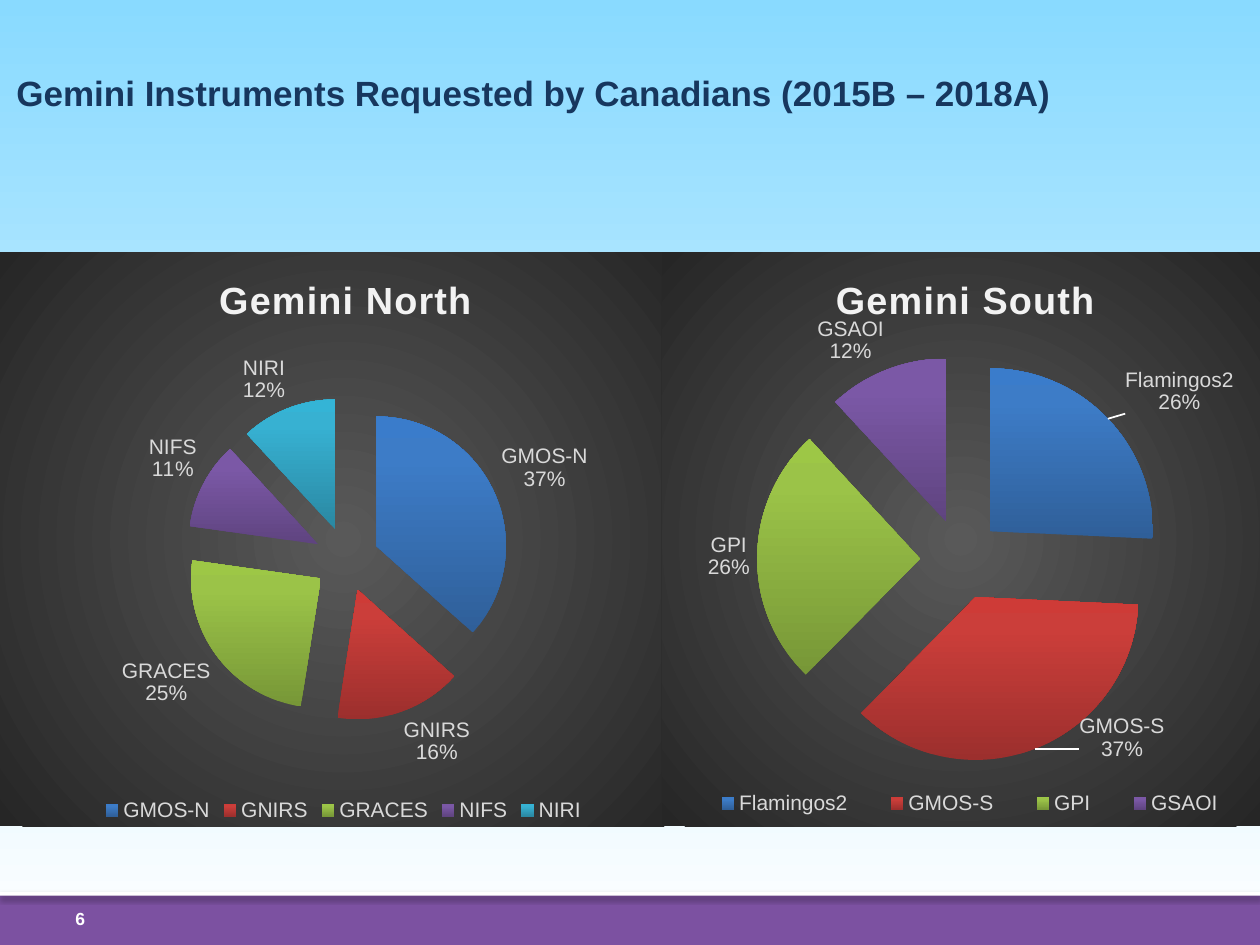
"""Build a slide with two exploded pie charts of requested Gemini instruments."""
from copy import deepcopy

from pptx import Presentation
from pptx.chart.data import CategoryChartData
from pptx.dml.color import RGBColor
from pptx.enum.chart import XL_CHART_TYPE as CT, XL_LABEL_POSITION as LP, XL_LEGEND_POSITION as LEG
from pptx.enum.shapes import MSO_SHAPE as SHAPE
from pptx.enum.text import MSO_ANCHOR as ANCHOR, PP_ALIGN as ALIGN
from pptx.oxml import parse_xml
from pptx.oxml.ns import nsdecls, qn
from pptx.util import Inches, Pt

NAVY = RGBColor(0x17, 0x37, 0x5E)
SKY = RGBColor(0x89, 0xDA, 0xFF)
PURPLE = RGBColor(0x7C, 0x51, 0xA1)
WHITE = RGBColor(0xFF, 0xFF, 0xFF)
BLACK = RGBColor(0, 0, 0)
SILVER = RGBColor(0xD9, 0xD9, 0xD9)
PALE = RGBColor(0xF2, 0xF2, 0xF2)
SLICES = [
    (RGBColor(0x2F, 0x5F, 0x99), RGBColor(0x3D, 0x7C, 0xC7), RGBColor(0x3A, 0x7C, 0xCB)),
    (RGBColor(0x9C, 0x2F, 0x2D), RGBColor(0xCB, 0x3E, 0x3A), RGBColor(0xCE, 0x3B, 0x37)),
    (RGBColor(0x77, 0x97, 0x37), RGBColor(0x9B, 0xC3, 0x48), RGBColor(0x9D, 0xC7, 0x46)),
    (RGBColor(0x5F, 0x44, 0x80), RGBColor(0x7B, 0x58, 0xA6), RGBColor(0x7C, 0x57, 0xA8)),
    (RGBColor(0x2A, 0x88, 0xA2), RGBColor(0x37, 0xB1, 0xD2), RGBColor(0x34, 0xB4, 0xD6)),
]
BACKDROP = (RGBColor(0x59, 0x59, 0x59), RGBColor(0x26, 0x26, 0x26))
CHARTS = [
    dict(title="Gemini North", left=-0.01, width=5.47, title_at=(0.31, 0.03),
         plot=(0.27, 0.25, 0.47, 0.57), legend=None, moved={},
         data={"GMOS-N": 37, "GNIRS": 16, "GRACES": 25, "NIFS": 11, "NIRI": 12}),
    dict(title="Gemini South", left=5.25, width=4.75, title_at=(0.28, 0.03),
         plot=(0.16, 0.18, 0.68, 0.71), legend=(0.04, 0.93, 0.95, 0.06),
         moved={0: (0.02, 0), 1: (0.07, -0.07)},
         data={"Flamingos2": 26, "GMOS-S": 37, "GPI": 26, "GSAOI": 12}),
]


def gradient(colors, positions, shade):
    stops = "".join(f'<a:gs pos="{pos * 1000}"><a:srgbClr val="{color}"/></a:gs>'
                    for color, pos in zip(colors, positions))
    return parse_xml(f'<a:gradFill {nsdecls("a")} rotWithShape="1">'
                     f'<a:gsLst>{stops}</a:gsLst>{shade}</a:gradFill>')


def place(follower, box, mode="edge", target=""):
    for old in follower.getparent().findall(qn("c:layout")):
        follower.getparent().remove(old)
    modes = "".join(f'<c:{a}Mode val="{mode}"/>' for a in "xy") if mode else ""
    sizes = "".join(f'<c:{a} val="{v}"/>' for a, v in zip("xywh", box))
    follower.addprevious(parse_xml(
        f'<c:layout {nsdecls("c")}><c:manualLayout>{target}{modes}{sizes}'
        '</c:manualLayout></c:layout>'))


prs = Presentation()
prs.slide_width, prs.slide_height = Inches(10), Inches(7.5)
s = prs.slides.add_slide(prs.slide_layouts[5])

for top, height, color in [(0, 7.5, SKY), (7.08, 0.42, PURPLE), (7.08, 0.03, WHITE)]:
    sp = s.shapes.add_shape(SHAPE.RECTANGLE, 0, Inches(top), prs.slide_width, Inches(height))
    sp.shadow.inherit = False
    sp.line.fill.background()
    if color == SKY:
        sp.fill.gradient()
        sp.fill.gradient_angle = 270
        for stop, stop_color in zip(sp.fill.gradient_stops, (SKY, WHITE)):
            stop.color.rgb = stop_color
    else:
        sp.fill.solid()
        sp.fill.fore_color.rgb = color
sp._element.spPr.find(qn("a:effectLst")).append(parse_xml(
    f'<a:outerShdw {nsdecls("a")} blurRad="{Pt(3.1)}" dist="{Pt(1.8)}" dir="5400000">'
    '<a:srgbClr val="000000"><a:alpha val="35000"/></a:srgbClr></a:outerShdw>'))

title = s.shapes.title
title.left, title.top, title.width, title.height = Inches(0.03), 0, Inches(9.08), Inches(0.95)
s.shapes._spTree.append(title._element)
number = s.shapes.add_textbox(Inches(0.5), Inches(7.08), Inches(0.83), Inches(0.42))
for sp, text, size, color, anchor in [
    (title, "Gemini Instruments Requested by Canadians (2015B – 2018A)", 20, NAVY, ANCHOR.BOTTOM),
    (number, "6", 10, WHITE, ANCHOR.MIDDLE),
]:
    tf = sp.text_frame
    tf.word_wrap, tf.vertical_anchor = True, anchor
    p = tf.paragraphs[0]
    p.text, p.alignment = text, ALIGN.LEFT
    p.font.name, p.font.size, p.font.bold = "Arial", Pt(size), True
    p.font.color.rgb = color

for c in CHARTS:
    data = CategoryChartData()
    data.categories = list(c["data"])
    data.add_series("Series 1", list(c["data"].values()))
    chart = s.shapes.add_chart(CT.PIE, Inches(c["left"]), Inches(2), Inches(c["width"]),
                               Inches(4.56), data).chart
    chart.font.name, chart.font.size, chart.font.color.rgb = "Arial", Pt(10), BLACK
    backdrop = parse_xml(f'<c:spPr {nsdecls("c", "a")}><a:ln><a:noFill/></a:ln></c:spPr>')
    backdrop.insert(0, gradient(BACKDROP, (0, 100), '<a:path path="circle"><a:fillToRect '
                                'l="50000" t="50000" r="50000" b="50000"/></a:path>'))
    chart._chartSpace.find(qn("c:chart")).addnext(backdrop)

    chart.has_title = True
    p = chart.chart_title.text_frame.paragraphs[0]
    r = p.add_run()
    r.text = c["title"]
    r.font.name, r.font.size, r.font.bold = "Arial", Pt(21.6), True
    r.font.color.rgb = PALE
    r._r.get_or_add_rPr().set("spc", "60")
    place(chart.chart_title._element.find(qn("c:overlay")), c["title_at"])

    chart.has_legend = True
    legend = chart.legend
    legend.position, legend.include_in_layout = LEG.BOTTOM, False
    legend.font.name, legend.font.size, legend.font.color.rgb = "Arial", Pt(12), SILVER
    if c["legend"]:
        place(legend._element.find(qn("c:overlay")), c["legend"])

    plot = chart.plots[0]
    plot.vary_by_categories = True
    place(plot._element, c["plot"], target='<c:layoutTarget val="inner"/>')
    series = plot.series[0]
    for i, colors in enumerate(SLICES[:len(c["data"])]):
        spPr = series.points[i].format._element.get_or_add_spPr()
        spPr.append(gradient(colors, (0, 80, 100), '<a:lin ang="16200000" scaled="0"/>'))
    series._element.find(qn("c:dPt")).addprevious(
        parse_xml(f'<c:explosion {nsdecls("c")} val="25"/>'))

    labels = series.data_labels
    labels.show_value, labels.show_category_name, labels.show_percentage = False, True, True
    labels.number_format, labels.number_format_is_linked = "0%", False
    labels.position = LP.OUTSIDE_END
    labels.font.name, labels.font.size, labels.font.color.rgb = "Arial", Pt(12), SILVER
    dLbls = labels._element
    separator = parse_xml(f'<c:separator {nsdecls("c")}>\n</c:separator>')
    dLbls.find(qn("c:showBubbleSize")).addnext(separator)
    shared = [el for el in dLbls if el.tag != qn("c:showLeaderLines")]
    for i, (point, offset) in enumerate(c["moved"].items()):
        dLbl = parse_xml(f'<c:dLbl {nsdecls("c")}><c:idx val="{point}"/></c:dLbl>')
        dLbl.extend(deepcopy(shared))
        place(dLbl[1], offset, mode="")
        dLbls.insert(i, dLbl)
    dLbls.append(parse_xml(
        f'<c:leaderLines {nsdecls("c", "a")}><c:spPr><a:ln w="{Pt(1)}"><a:solidFill>'
        f'<a:srgbClr val="{WHITE}"/></a:solidFill></a:ln></c:spPr></c:leaderLines>'))

prs.save("out.pptx")
